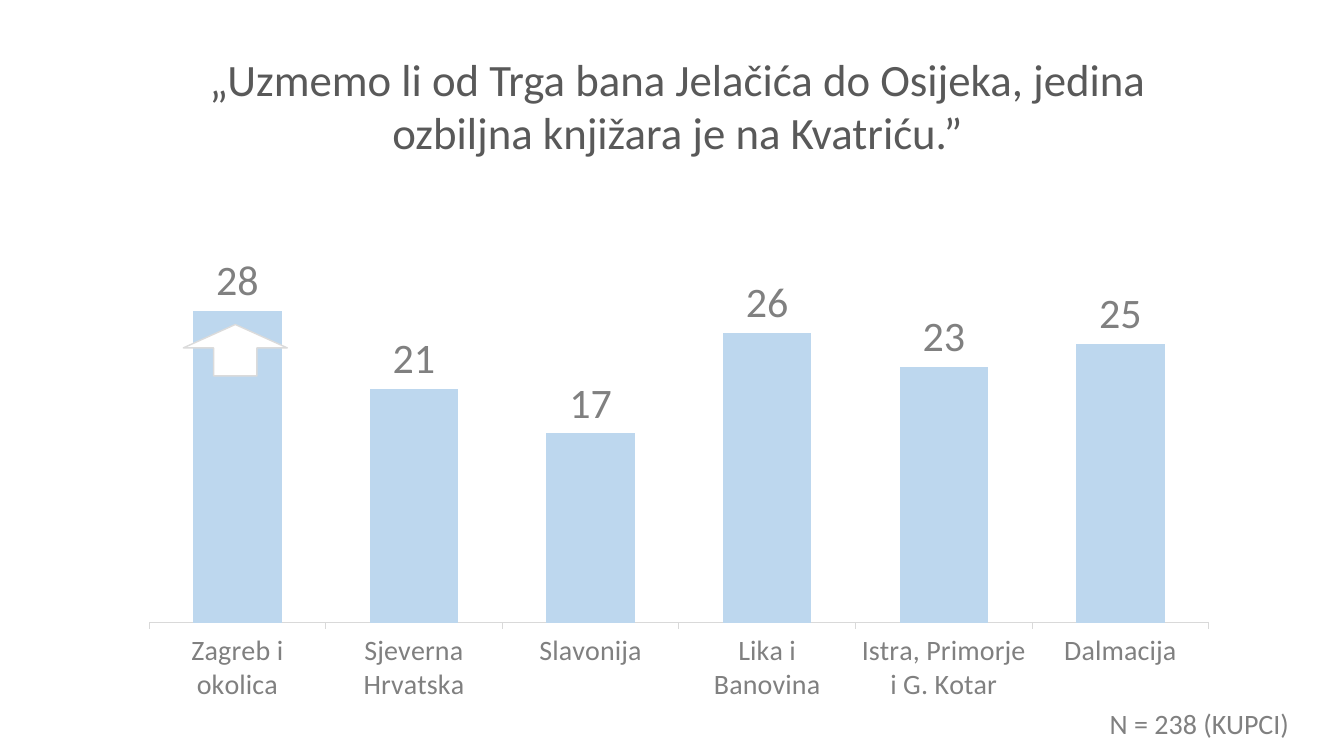
from lxml.etree import SubElement
from pptx import Presentation
from pptx.chart.data import CategoryChartData
from pptx.dml.color import RGBColor
from pptx.enum.chart import XL_CHART_TYPE as ChartType
from pptx.enum.chart import XL_LABEL_POSITION as LabelPosition
from pptx.enum.chart import XL_TICK_MARK as TickMark
from pptx.enum.shapes import MSO_SHAPE as Shape
from pptx.enum.text import MSO_ANCHOR as Anchor
from pptx.enum.text import MSO_AUTO_SIZE as AutoSize
from pptx.enum.text import PP_ALIGN as Align
from pptx.oxml.ns import qn
from pptx.util import Pt

TITLE = "„Uzmemo li od Trga bana Jelačića do Osijeka, jedina ozbiljna knjižara je na Kvatriću.”"
SAMPLE_NOTE = "N = 238 (KUPCI)"
BUYERS_BY_REGION = {
    "Zagreb i okolica": 28,
    "Sjeverna Hrvatska": 21,
    "Slavonija": 17,
    "Lika i Banovina": 26,
    "Istra, Primorje i G. Kotar": 23,
    "Dalmacija": 25,
}


class Theme:
    font = "Calibri"
    title = RGBColor(0x59, 0x59, 0x59)
    text = RGBColor(0x80, 0x80, 0x80)
    bar = RGBColor(0xBD, 0xD7, 0xEE)
    axis = RGBColor(0xD9, 0xD9, 0xD9)
    arrow = RGBColor(0xFF, 0xFF, 0xFF)
    arrow_line = RGBColor(0xDB, 0xDB, 0xDB)
    title_size, label_size, text_size = 32, 30, 20


# left, top, width, height in points
TITLE_AREA = (103.7, 33.1, 761, 85)
CHART_AREA = (83.5, 164.2, 793.4, 352.8)
ARROW_AREA = (131, 231.8, 74.2, 36.7)
NOTE_AREA = (782.6, 501.1, 145.4, 31.7)
# shares of the chart area
PLOT_AREA = {"x": 0.029, "y": 0.119, "w": 0.954, "h": 0.677}


def points(area):
    return [Pt(length) for length in area]


def style_font(font, size, color):
    font.name = Theme.font
    font.size = Pt(size)
    font.bold = False
    font.color.rgb = color


def write_text(box, text, size, color, align):
    frame = box.text_frame
    frame.text = text
    frame.word_wrap = True
    frame.auto_size = AutoSize.NONE
    frame.vertical_anchor = Anchor.TOP
    para = frame.paragraphs[0]
    para.alignment = align
    style_font(para.runs[0].font, size, color)


def fix_plot_area(chart):
    """Pin the inner plot area to the shares in PLOT_AREA."""
    plot_area = chart._chartSpace.chart.plotArea
    for old_layout in plot_area.findall(qn("c:layout")):
        plot_area.remove(old_layout)
    layout = SubElement(plot_area, qn("c:layout"))
    plot_area.insert(0, layout)
    manual = SubElement(layout, qn("c:manualLayout"))
    settings = {"layoutTarget": "inner", "xMode": "edge", "yMode": "edge", **PLOT_AREA}
    for name, value in settings.items():
        SubElement(manual, qn(f"c:{name}")).set("val", str(value))


def add_region_chart(slide):
    data = CategoryChartData()
    data.categories = list(BUYERS_BY_REGION)
    data.add_series("Series 1", list(BUYERS_BY_REGION.values()))
    chart = slide.shapes.add_chart(
        ChartType.COLUMN_CLUSTERED, *points(CHART_AREA), data
    ).chart
    chart.has_title = False
    chart.has_legend = False
    style_font(chart.font, Theme.text_size, Theme.text)

    regions = chart.category_axis
    regions.major_tick_mark = TickMark.OUTSIDE
    regions.format.line.color.rgb = Theme.axis
    regions.format.line.width = Pt(0.75)
    style_font(regions.tick_labels.font, Theme.text_size, Theme.text)

    values = chart.value_axis
    values.minimum_scale, values.maximum_scale = 0, 30
    values.has_major_gridlines = False
    values.visible = False

    plot = chart.plots[0]
    plot.gap_width, plot.overlap = 100, -27
    plot.vary_by_categories = False
    bars = plot.series[0]
    bars.format.fill.solid()
    bars.format.fill.fore_color.rgb = Theme.bar
    labels = bars.data_labels
    labels.show_value = True
    labels.position = LabelPosition.OUTSIDE_END
    style_font(labels.font, Theme.label_size, Theme.text)
    fix_plot_area(chart)


def add_highlight_arrow(slide):
    arrow = slide.shapes.add_shape(Shape.UP_ARROW, *points(ARROW_AREA))
    arrow.adjustments[0], arrow.adjustments[1] = 0.417, 0.455
    arrow.shadow.inherit = False
    arrow.fill.solid()
    arrow.fill.fore_color.rgb = Theme.arrow
    arrow.line.color.rgb = Theme.arrow_line
    arrow.line.width = Pt(1)


def main():
    deck = Presentation()
    deck.slide_width, deck.slide_height = Pt(960), Pt(540)
    slide = deck.slides.add_slide(deck.slide_layouts[5])

    title = slide.shapes.title
    title.left, title.top, title.width, title.height = points(TITLE_AREA)
    write_text(title, TITLE, Theme.title_size, Theme.title, Align.CENTER)

    add_region_chart(slide)
    add_highlight_arrow(slide)

    note = slide.shapes.add_textbox(*points(NOTE_AREA))
    write_text(note, SAMPLE_NOTE, Theme.text_size, Theme.text, Align.RIGHT)

    deck.save("out.pptx")


if __name__ == "__main__":
    main()
